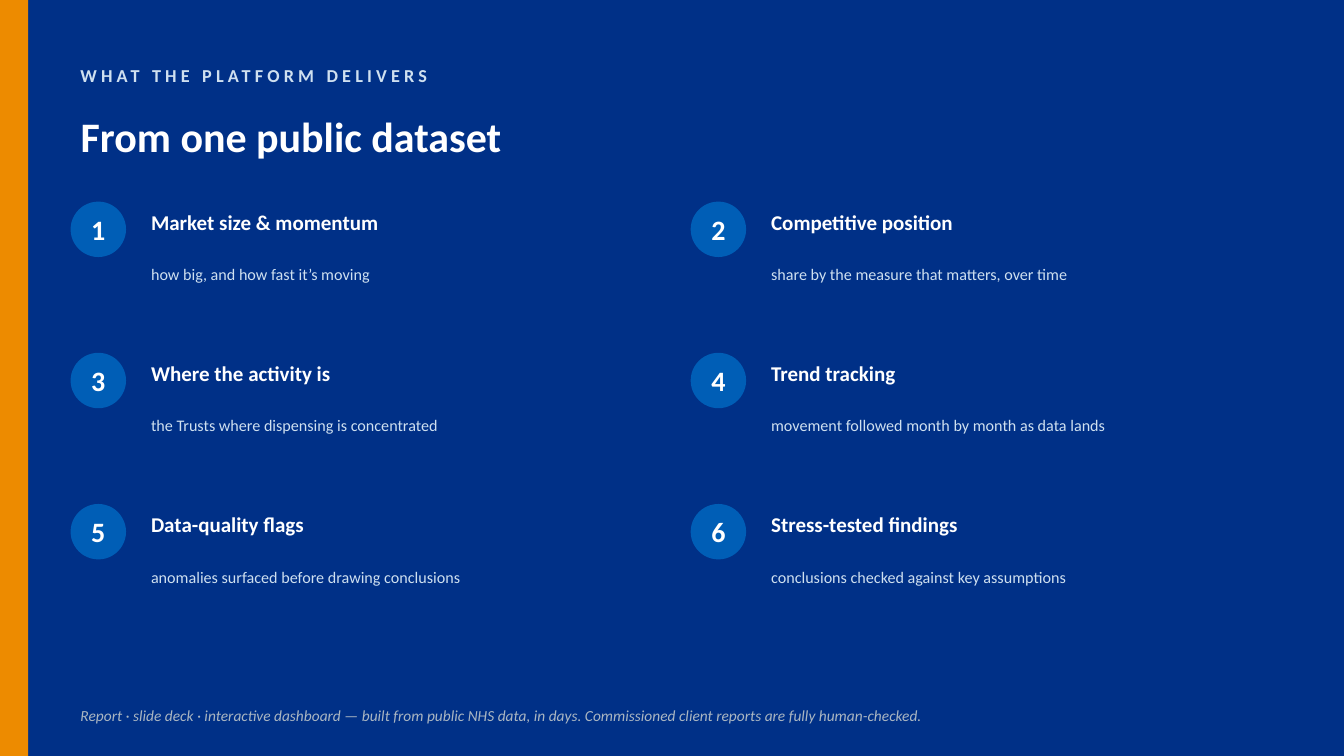
from pptx import Presentation
from pptx.dml.color import RGBColor
from pptx.enum.shapes import MSO_SHAPE
from pptx.enum.text import MSO_ANCHOR, PP_ALIGN
from pptx.util import Inches, Pt

WIDTH, HEIGHT = 13.33, 7.5
LEFT = 0.7
COLORS = {
    "navy": "003087",
    "blue": "005EB6",
    "orange": "ED8B00",
    "white": "FFFFFF",
    "pale": "CFE0F0",
    "grey": "AAB6C2",
}
ITEMS = [
    ("Market size & momentum", "how big, and how fast it’s moving"),
    ("Competitive position", "share by the measure that matters, over time"),
    ("Where the activity is", "the Trusts where dispensing is concentrated"),
    ("Trend tracking", "movement followed month by month as data lands"),
    ("Data-quality flags", "anomalies surfaced before drawing conclusions"),
    ("Stress-tested findings", "conclusions checked against key assumptions"),
]


def color(name):
    """Return the named palette colour."""
    return RGBColor.from_string(COLORS[name])


def write(shape, text, size, tone, bold=False, italic=False, align=PP_ALIGN.LEFT):
    """Write one formatted run, centred vertically, and return it."""
    frame = shape.text_frame
    frame.word_wrap = True
    frame.vertical_anchor = MSO_ANCHOR.MIDDLE
    para = frame.paragraphs[0]
    para.alignment = align
    run = para.add_run()
    run.text = text
    font = run.font
    font.name, font.size = "Calibri", Pt(size)
    font.bold, font.italic = bold, italic
    font.color.rgb = color(tone)
    return run


def label(slide, box, *args, **style):
    """Add a text box and return its run."""
    return write(slide.shapes.add_textbox(*map(Inches, box)), *args, **style)


def solid(slide, kind, box, tone):
    """Add a flat filled shape without an outline."""
    shape = slide.shapes.add_shape(kind, *map(Inches, box))
    shape.shadow.inherit = False
    shape.fill.solid()
    shape.fill.fore_color.rgb = color(tone)
    shape.line.fill.background()
    return shape


def header(slide, x, y, width):
    """Place the spaced kicker and the title below it."""
    run = label(slide, (x, y, 11, 0.4), "WHAT THE PLATFORM DELIVERS", 13, "pale", bold=True)
    run.font._element.set("spc", "300")
    title = slide.shapes.title
    title.left, title.top = Inches(x), Inches(y + 0.4)
    title.width, title.height = Inches(width), Inches(0.8)
    write(title, "From one public dataset", 30, "white", bold=True)


def item(slide, x, y, number, name, detail):
    """Place a numbered disc with its heading and detail."""
    disc = solid(slide, MSO_SHAPE.OVAL, (x, y, 0.55, 0.55), "blue")
    frame = disc.text_frame
    frame.margin_left = frame.margin_right = 0
    write(disc, str(number), 20, "white", bold=True, align=PP_ALIGN.CENTER)
    label(slide, (x + 0.7, y - 0.05, 5.2, 0.5), name, 15, "white", bold=True)
    label(slide, (x + 0.7, y + 0.42, 5.2, 0.6), detail, 11.5, "pale")


def grid(slide, x, y, across, down, cols=2):
    """Lay the items out row by row at equal steps."""
    for index, (name, detail) in enumerate(ITEMS):
        row, col = divmod(index, cols)
        item(slide, x + col * across, y + row * down, index + 1, name, detail)


def footer(slide, x, y, width):
    """Place the closing note."""
    note = (
        "Report · slide deck · interactive dashboard — built from public NHS data, "
        "in days. Commissioned client reports are fully human-checked."
    )
    label(slide, (x, y, width, 0.4), note, 11, "grey", italic=True)


def main():
    """Build and save the slide."""
    deck = Presentation()
    deck.slide_width, deck.slide_height = Inches(WIDTH), Inches(HEIGHT)
    slide = deck.slides.add_slide(deck.slide_layouts[5])
    slide.background.fill.solid()
    slide.background.fill.fore_color.rgb = color("navy")
    solid(slide, MSO_SHAPE.RECTANGLE, (0, 0, 0.28, HEIGHT), "orange")
    header(slide, LEFT, 0.55, 12)
    grid(slide, LEFT, 2, 6.15, 1.5)
    footer(slide, LEFT, 6.9, 12)
    deck.save("out.pptx")


if __name__ == "__main__":
    main()
